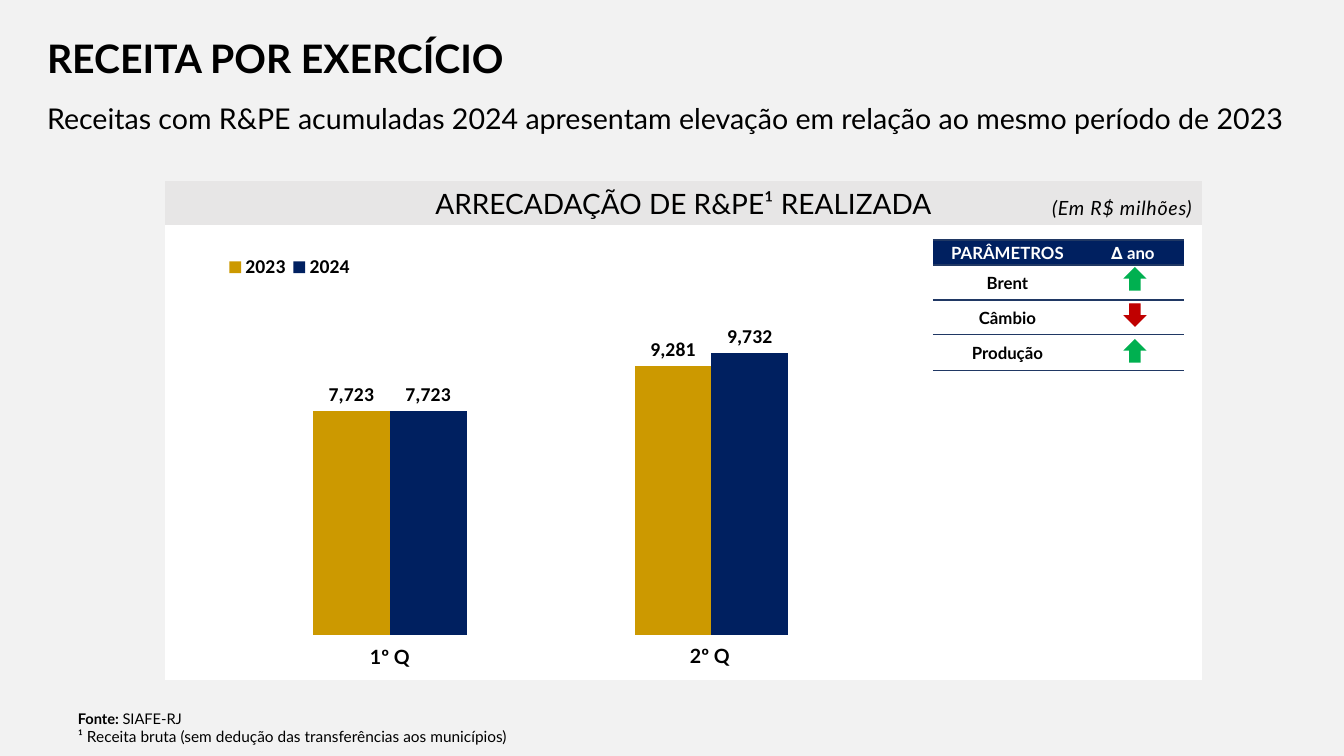
"""Build the slide on oil revenue by fiscal year, with chart and parameter table."""
import pptx
import pptx.chart.data
import pptx.dml.color
import pptx.enum.chart
import pptx.enum.shapes
import pptx.enum.text
import pptx.oxml
import pptx.oxml.ns
import pptx.util

TITLE = "RECEITA POR EXERCÍCIO"
SUBTITLE = "Receitas com R&PE acumuladas 2024 apresentam elevação em relação ao mesmo período de 2023"
HEADER = "ARRECADAÇÃO DE R&PE¹ REALIZADA"
UNIT = "(Em R$ milhões)"
SOURCE = ("Fonte: ", "SIAFE-RJ")
FOOTNOTE = "¹ Receita bruta (sem dedução das transferências aos municípios)"
QUARTERS = ["1º Q", "2º Q"]
MILLION = 1000000
SERIES = [("2023", "gold", (7723, 9281)), ("2024", "navy", (7723, 9732))]
TABLE_HEAD = ["PARÂMETROS", "∆ ano"]
PARAMETERS = [("Brent", "up"), ("Câmbio", "down"), ("Produção", "up")]

COLORS = {"back": "F2F2F2", "band": "E7E6E6", "white": "FFFFFF", "black": "000000",
          "gold": "CC9900", "navy": "002060", "rule": "203864",
          "up": "00B050", "down": "C00000"}
FONT, CHART_FONT = "Lato", "Calibri"
MILLIONS_FORMAT = "#,##0,,"
PLAIN_TABLE = "{2D5ABB26-0587-4C30-8999-92F81FD0307C}"
PANEL_X, PANEL_W = 165, 1037
CHART = (215, 240, 670, 402)
PLOT = (229, 287, 643, 348)
LEGEND = (222, 250, 136, 34)
QUARTER_BOXES = [(360, 640, 134, 34), (680, 639, 134, 34)]
TABLE_X, TABLE_Y = 933, 240
COL_W, ROW_H = [149, 102], [25, 35, 35, 36]
ARROW_X, ARROW_Y, ARROW_STEP = 1125, 268, 36

ALIGN = pptx.enum.text.PP_ALIGN
MIDDLE = pptx.enum.text.MSO_ANCHOR.MIDDLE
SHAPE = pptx.enum.shapes.MSO_SHAPE
qn = pptx.oxml.ns.qn
A_NS = pptx.oxml.ns.nsdecls("a")
C_NS = pptx.oxml.ns.nsdecls("c")


def px(n):
    return round(n * 12192000 / 1344)


def box(*lengths):
    return [px(n) for n in lengths]


def rgb(name):
    return pptx.dml.color.RGBColor.from_string(COLORS[name])


def style(font, size, color="black", bold=False, italic=False, name=FONT):
    font.name, font.size = name, pptx.util.Pt(size)
    font.bold, font.italic = bold, italic
    font.color.rgb = rgb(color)


def write(p, text, size, align=ALIGN.LEFT, spacing=1.0, **look):
    p.text = text
    p.alignment, p.line_spacing = align, spacing
    p.space_before = pptx.util.Pt(0)
    for r in p.runs:
        style(r.font, size, **look)


def fill_placeholder(sp, place, text, size, spacing, bold=False):
    sp.left, sp.top, sp.width, sp.height = box(*place)
    tf = sp.text_frame
    tf.auto_size = pptx.enum.text.MSO_AUTO_SIZE.NONE
    tf.vertical_anchor = MIDDLE
    p = tf.paragraphs[0]
    pPr = p._p.get_or_add_pPr()
    pPr.set("marL", "0")
    pPr.set("indent", "0")
    pPr.append(pptx.oxml.parse_xml(f"<a:buNone {A_NS}/>"))
    write(p, text, size, spacing=spacing, bold=bold)


def add_text(s, place):
    tf = s.shapes.add_textbox(*box(*place)).text_frame
    tf.word_wrap = True
    return tf


def add_shape(s, kind, place, color, outlined=False):
    sp = s.shapes.add_shape(kind, *box(*place))
    sp.shadow.inherit = False
    sp.fill.solid()
    sp.fill.fore_color.rgb = rgb(color)
    if outlined:
        sp.line.color.rgb = rgb(color)
        sp.line.width = pptx.util.Pt(1)
        miter = pptx.oxml.parse_xml(f'<a:miter {A_NS} lim="800000"/>')
        sp.line._get_or_add_ln().append(miter)
    else:
        sp.line.fill.background()
    return sp


def set_layout(parent, area, before, target=""):
    for old in parent.findall(qn("c:layout")):
        parent.remove(old)
    x, y, w, h = area
    cx, cy, cw, ch = CHART
    sizes = {"x": (x - cx) / cw, "y": (y - cy) / ch, "w": w / cw, "h": h / ch}
    values = "".join(f'<c:{k} val="{v:.3f}"/>' for k, v in sizes.items())
    layout = pptx.oxml.parse_xml(
        f'<c:layout {C_NS}><c:manualLayout>{target}'
        f'<c:xMode val="edge"/><c:yMode val="edge"/>{values}</c:manualLayout></c:layout>')
    parent.find(qn(before)).addprevious(layout)


def add_revenue_chart(s):
    data = pptx.chart.data.CategoryChartData(number_format=MILLIONS_FORMAT)
    data.categories = ["1", "2"]
    for name, _, values in SERIES:
        data.add_series(name, [v * MILLION for v in values])
    kind = pptx.enum.chart.XL_CHART_TYPE.COLUMN_CLUSTERED
    chart = s.shapes.add_chart(kind, *box(*CHART), data).chart
    chart.has_title = False
    style(chart.font, 14, bold=True, name=CHART_FONT)
    chart.has_legend = True
    chart.legend.position = pptx.enum.chart.XL_LEGEND_POSITION.TOP
    chart.legend.include_in_layout = False
    style(chart.legend.font, 14, bold=True, name=CHART_FONT)
    chart.category_axis.visible = False
    axis = chart.value_axis
    axis.minimum_scale, axis.maximum_scale = 0, 12000 * MILLION
    axis.has_major_gridlines = False
    axis.visible = False
    plot = chart.plots[0]
    plot.gap_width, plot.overlap, plot.vary_by_categories = 219, 0, False
    for ser, (_, color, _) in zip(plot.series, SERIES):
        ser.format.fill.solid()
        ser.format.fill.fore_color.rgb = rgb(color)
        labels = ser.data_labels
        labels.show_value = True
        labels.number_format, labels.number_format_is_linked = MILLIONS_FORMAT, False
        labels.position = pptx.enum.chart.XL_LABEL_POSITION.OUTSIDE_END
        style(labels.font, 14, bold=True, name=CHART_FONT)
    area = chart._chartSpace.chart.plotArea
    set_layout(area, PLOT, "c:barChart", '<c:layoutTarget val="inner"/>')
    set_layout(chart.legend._element, LEGEND, "c:overlay")


def add_rules(cell):
    for i, side in enumerate(("lnT", "lnB")):
        line = pptx.oxml.parse_xml(
            f'<a:{side} {A_NS} w="12700"><a:solidFill>'
            f'<a:srgbClr val="{COLORS["rule"]}"/></a:solidFill></a:{side}>')
        cell._tc.get_or_add_tcPr().insert(i, line)


def add_parameter_table(s):
    rows = [TABLE_HEAD] + [(name, "") for name, _ in PARAMETERS]
    place = box(TABLE_X, TABLE_Y, sum(COL_W), sum(ROW_H))
    table = s.shapes.add_table(len(rows), len(COL_W), *place).table
    table.horz_banding = False
    table._tbl.tblPr.find(qn("a:tableStyleId")).text = PLAIN_TABLE
    for col, width in zip(table.columns, COL_W):
        col.width = px(width)
    for i, texts in enumerate(rows):
        table.rows[i].height = px(ROW_H[i])
        for j, text in enumerate(texts):
            cell = table.cell(i, j)
            cell.margin_left = cell.margin_right = cell.margin_top = px(1)
            cell.margin_bottom = 0
            cell.vertical_anchor = MIDDLE
            if i == 0:
                cell.fill.solid()
                cell.fill.fore_color.rgb = rgb("navy")
            else:
                cell.fill.background()
            add_rules(cell)
            if text:
                write(cell.text_frame.paragraphs[0], text, 12, ALIGN.CENTER,
                      color="black" if i else "white", bold=True)
    for i, (_, trend) in enumerate(PARAMETERS):
        kind = SHAPE.UP_ARROW if trend == "up" else SHAPE.DOWN_ARROW
        add_shape(s, kind, (ARROW_X, ARROW_Y + i * ARROW_STEP, 20, 22), trend, True)


def main():
    prs = pptx.Presentation()
    prs.slide_width, prs.slide_height = box(1344, 756)
    s = prs.slides.add_slide(prs.slide_layouts[1])
    s.background.fill.solid()
    s.background.fill.fore_color.rgb = rgb("back")
    fill_placeholder(s.shapes.title, (37, 21, 896, 80), TITLE, 28, 0.9, True)
    fill_placeholder(s.placeholders[1], (37, 87, 1270, 59), SUBTITLE, 20.4, 1.1)

    band = add_shape(s, SHAPE.RECTANGLE, (PANEL_X, 181, PANEL_W, 44), "band")
    write(band.text_frame.paragraphs[0], HEADER, 20, ALIGN.CENTER)
    add_shape(s, SHAPE.RECTANGLE, (PANEL_X, 225, PANEL_W, 455), "white")
    p = add_text(s, (1015, 186, 187, 40)).paragraphs[0]
    write(p, UNIT, 14, ALIGN.RIGHT, 1.2, italic=True)
    p.runs[0].font._element.set("spc", "50")

    add_revenue_chart(s)
    for quarter, place in zip(QUARTERS, QUARTER_BOXES):
        write(add_text(s, place).paragraphs[0], quarter, 14, bold=True)
    add_parameter_table(s)

    tf = add_text(s, (68, 705, 1211, 46))
    write(tf.paragraphs[0], SOURCE[0], 10.5, bold=True)
    r = tf.paragraphs[0].add_run()
    r.text = SOURCE[1]
    style(r.font, 10.5)
    write(tf.add_paragraph(), FOOTNOTE, 11)
    prs.save("out.pptx")


if __name__ == "__main__":
    main()
